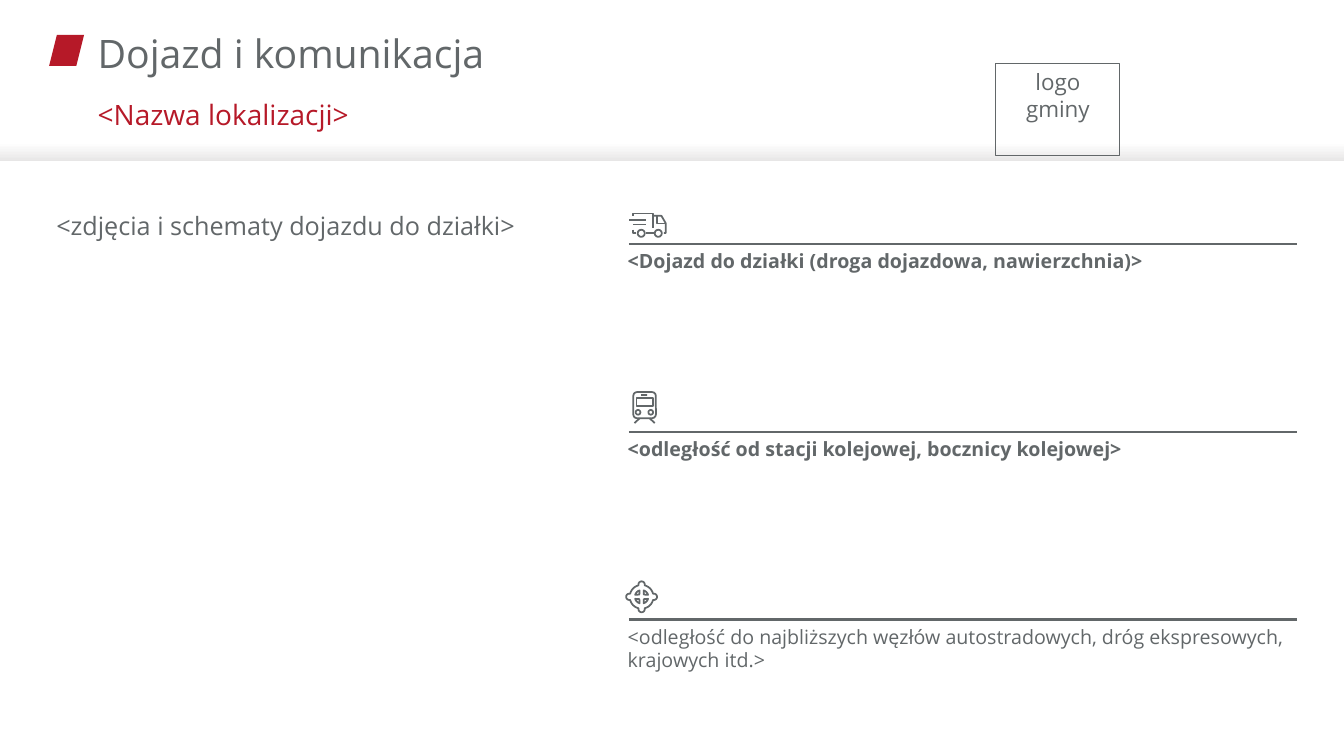
from math import cos, pi, sin

from lxml import etree
from pptx import Presentation
from pptx.dml.color import RGBColor
from pptx.enum.shapes import MSO_CONNECTOR, MSO_SHAPE
from pptx.enum.text import MSO_ANCHOR, MSO_AUTO_SIZE, PP_ALIGN
from pptx.oxml.ns import qn
from pptx.util import Cm, Pt

LEFT, CENTER = PP_ALIGN.LEFT, PP_ALIGN.CENTER
TOP, MIDDLE = MSO_ANCHOR.TOP, MSO_ANCHOR.MIDDLE
RECTANGLE, ROUNDED = MSO_SHAPE.RECTANGLE, MSO_SHAPE.ROUNDED_RECTANGLE
OVAL, PARALLELOGRAM = MSO_SHAPE.OVAL, MSO_SHAPE.PARALLELOGRAM
STRAIGHT = MSO_CONNECTOR.STRAIGHT
COLORS = {"gray": "626769", "red": "B61928", "white": "FFFFFF", "shade": "E7E6E6"}
FONT = "Open Sans"
ICON_WIDTH = 1.25


def write(box, text, size=14, color="gray", bold=False, align=LEFT, anchor=TOP,
          inset=None, spacing=1.0, after=0):
    frame = box.text_frame
    frame.word_wrap = True
    frame.auto_size = MSO_AUTO_SIZE.NONE
    frame.vertical_anchor = anchor
    if inset is not None:
        frame.margin_left = frame.margin_right = Cm(inset)
        frame.margin_top = frame.margin_bottom = Cm(inset)
    para = frame.paragraphs[0]
    para.alignment = align
    para.line_spacing = spacing
    para.space_before = Pt(0)
    para.space_after = Pt(after)
    span = para.add_run()
    span.text = text
    span.font.name = FONT
    span.font.size = Pt(size)
    span.font.bold = bold
    span.font.color.rgb = RGBColor.from_string(COLORS[color])


def paint(shape, fill=None, line=None, width=ICON_WIDTH):
    shape.shadow.inherit = False
    if fill:
        shape.fill.solid()
        shape.fill.fore_color.rgb = RGBColor.from_string(COLORS[fill])
    else:
        shape.fill.background()
    if line:
        shape.line.color.rgb = RGBColor.from_string(COLORS[line])
        shape.line.width = Pt(width)
    else:
        shape.line.fill.background()


deck = Presentation()
deck.slide_width, deck.slide_height = Cm(33.87), Cm(19.05)
page = deck.slides.add_slide(deck.slide_layouts[1])
shapes = page.shapes

band = shapes.add_shape(RECTANGLE, 0, Cm(3.6), deck.slide_width, Cm(0.47))
paint(band)
band.fill.gradient()
band.fill.gradient_angle = 270
for stop, color, position in zip(band.fill.gradient_stops, ("white", "shade"), (0, 1)):
    stop.color.rgb = RGBColor.from_string(COLORS[color])
    stop.position = position

emblem = shapes.add_shape(PARALLELOGRAM, Cm(1.24), Cm(0.88), Cm(0.88), Cm(0.78))
paint(emblem, fill="red")

logo_box = shapes.add_shape(RECTANGLE, Cm(25.1), Cm(1.6), Cm(3.12), Cm(2.31))
paint(logo_box, line="gray", width=0.75)
write(logo_box, "logo gminy", size=16, align=CENTER)

title, location = shapes.title, page.placeholders[1]
title.left, title.top, title.width, title.height = Cm(2.46), Cm(0.74), Cm(21.9), Cm(1.32)
location.left, location.top, location.width, location.height = Cm(2.46), Cm(2.18), Cm(21.9), Cm(1.5)
location_format = location.text_frame.paragraphs[0]._p.get_or_add_pPr()
location_format.set("marL", "0")
location_format.set("indent", "0")
etree.SubElement(location_format, qn("a:buNone"))
write(title, "Dojazd i komunikacja", size=28, anchor=MIDDLE, inset=0, spacing=0.9)
write(location, "<Nazwa lokalizacji>", size=20, color="red", anchor=MIDDLE, inset=0, spacing=0.9)

pictures_box = shapes.add_textbox(Cm(1.17), Cm(5.18), Cm(14.05), Cm(1.02))
write(pictures_box, "<zdjęcia i schematy dojazdu do działki>", size=18)

rows = [
    ("<Dojazd do działki (droga dojazdowa, nawierzchnia)>", True, 17.63, 2.5),
    ("<odległość od stacji kolejowej, bocznicy kolejowej>", True, 17.63, 2.5),
    ("<odległość do najbliższych węzłów autostradowych, dróg ekspresowych, krajowych itd.>",
     False, 17.15, 1.78),
]
lines = []
for index, (text, bold, width, height) in enumerate(rows):
    rule_top = 6.15 + 4.73 * index
    lines.append(((15.85, rule_top), (32.69, rule_top), 1.5))
    row_box = shapes.add_textbox(Cm(15.57), Cm(rule_top), Cm(width), Cm(height))
    write(row_box, text, bold=bold, after=6)

truck_lines = [
    ((15.86, 5.54), (16.28, 5.54)),
    ((15.95, 5.66), (16.28, 5.66)),
    ((16.27, 5.87), (16.49, 5.87)),
]
train_legs = [((16.12, 10.54), (15.99, 10.66)), ((16.37, 10.54), (16.5, 10.66))]
lines += [(start, end, ICON_WIDTH) for start, end in truck_lines + train_legs]
for start, end, width in lines:
    line = shapes.add_connector(STRAIGHT, *map(Cm, start + end))
    line.line.color.rgb = RGBColor.from_string(COLORS["gray"])
    line.line.width = Pt(width)
    etree.SubElement(line._element.spPr, qn("a:effectLst"))

outlines = [
    ([(15.96, 5.44), (15.96, 5.38), (16.46, 5.38), (16.46, 5.74)], False),
    ([(16.48, 5.44), (16.67, 5.44), (16.78, 5.63), (16.78, 5.87), (16.73, 5.87)], False),
    ([(16.56, 5.44), (16.56, 5.63), (16.76, 5.63)], False),
    ([(15.96, 5.79), (15.96, 5.87), (16.03, 5.87)], False),
]
target_x, target_y = 16.17, 15.04
ring = []
for quarter in range(4):
    turn = quarter * pi / 2
    for step in range(-4, 5):
        angle = turn + step * pi / 8
        ring.append((target_x + 0.31 * cos(turn) + 0.08 * cos(angle),
                     target_y + 0.31 * sin(turn) + 0.08 * sin(angle)))
    for step in range(7):
        angle = turn + pi / 12 * (1 + step * 2 / 3)
        ring.append((target_x + 0.3 * cos(angle), target_y + 0.3 * sin(angle)))
    middle = turn + pi / 4
    wedge = [(target_x + 0.08 * cos(middle), target_y + 0.08 * sin(middle))]
    for step in range(-2, 3):
        angle = middle + step * pi / 13
        wedge.append((target_x + 0.17 * cos(angle), target_y + 0.17 * sin(angle)))
    outlines.append((wedge, True))
outlines.append((ring, True))
for points, closed in outlines:
    corners = [(Cm(x), Cm(y)) for x, y in points]
    builder = shapes.build_freeform(*corners[0])
    builder.add_line_segments(corners[1:], close=closed)
    paint(builder.convert_to_shape(), line="gray")

wheels = [(16.16, 5.88, 0.09), (16.59, 5.88, 0.09), (16.08, 10.39, 0.06), (16.4, 10.39, 0.06)]
icon_parts = [(OVAL, x - radius, y - radius, 2 * radius, 2 * radius) for x, y, radius in wheels]
icon_parts += [
    (ROUNDED, 15.96, 9.88, 0.57, 0.66),
    (RECTANGLE, 16.04, 10.03, 0.41, 0.21),
]
for kind, *place in icon_parts:
    paint(shapes.add_shape(kind, *map(Cm, place)), line="gray")
train_sign = shapes.add_shape(RECTANGLE, Cm(16.16), Cm(9.93), Cm(0.15), Cm(0.05))
paint(train_sign, fill="gray")

deck.save("out.pptx")
